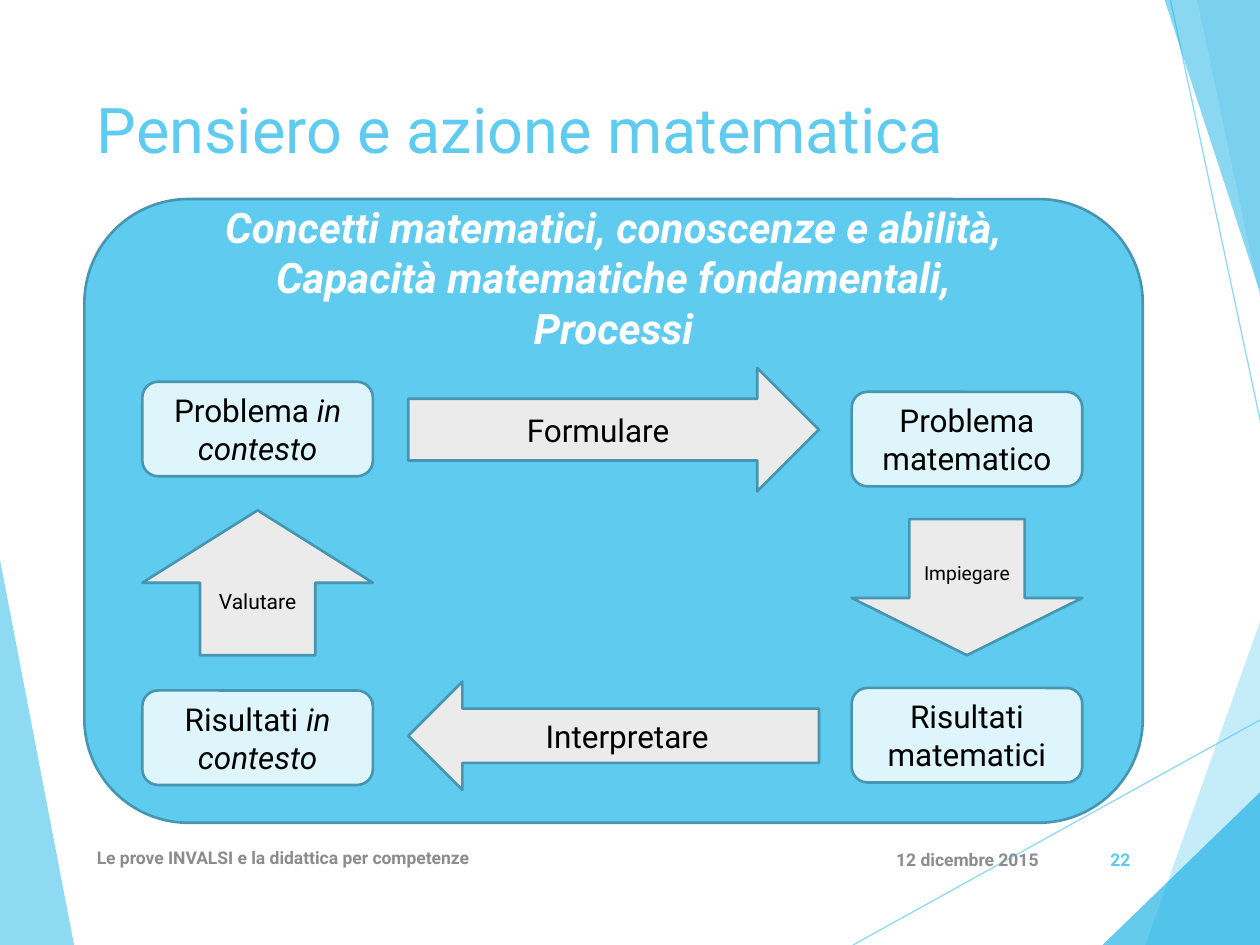
from pptx import Presentation
from pptx.util import Inches, Pt
from pptx.dml.color import RGBColor
from pptx.enum.shapes import MSO_CONNECTOR as Link, MSO_SHAPE as Kind
from pptx.enum.text import MSO_ANCHOR as Anchor, PP_ALIGN as Align
from pptx.oxml.ns import qn
from lxml.etree import SubElement

SKY = RGBColor(0x5F, 0xCB, 0xEF)
BLUE = RGBColor(0x17, 0xB0, 0xE4)
EDGE = RGBColor(0x46, 0x96, 0xB1)
PALE = RGBColor(0xDF, 0xF5, 0xFC)
MIST = RGBColor(0xEB, 0xEB, 0xEB)
GRAY = RGBColor(0x8C, 0x8C, 0x8C)
WHITE = RGBColor(0xFF, 0xFF, 0xFF)
BLACK = RGBColor(0, 0, 0)

deck = Presentation()
deck.slide_width, deck.slide_height = Inches(10), Inches(7.5)
slide = deck.slides.add_slide(deck.slide_layouts[6])
shapes = slide.shapes
unit = deck.slide_width / 100


def grid(*cells):
    return [round(cell * unit) for cell in cells]


def write(shape, lines, size, color, align, anchor=Anchor.MIDDLE, bold=False):
    frame = shape.text_frame
    frame.word_wrap = True
    frame.vertical_anchor = anchor
    frame.text = lines
    for para in frame.paragraphs:
        para.alignment = align
        for run in para.runs:
            run.font.name = "Roboto"
            run.font.size = Pt(size)
            run.font.bold = bold
            run.font.color.rgb = color


wedges = [
    (SKY, 70, [(-0.1, 43.9), (5.9, 75.1), (-0.1, 75)]),
    (SKY, 36, [(117.5, 0), (90.9, 75), (120.8, 75.1), (120.7, 0.1)]),
    (SKY, 20, [(95, -0.1), (110.8, 75), (120.7, 75), (120.7, -0.1)]),
    (BLUE, 66, [(87.5, 75), (120.6, 42.9), (120.7, 75)]),
    (BLUE, 50, [(92.4, -0.1), (116.9, 75), (120.7, 74.9), (120.7, -0.1)]),
]
rays = [(67.7, 75, 120.7, 45.7), (92.9, 0, 108.9, 75)]

for num, (color, alpha, points) in enumerate(wedges):
    if num == 1:
        for ray in rays:
            line = shapes.add_connector(Link.STRAIGHT, *grid(*ray))
            line.line.color.rgb = SKY
            line.line.width = Pt(0.75)
            tint = line.line.fill._xPr.find(".//" + qn("a:srgbClr"))
            SubElement(tint, qn("a:alpha"), val="70000")
            SubElement(line._element.spPr, qn("a:effectLst"))
    points = [grid(*point) for point in points]
    form = shapes.build_freeform(*points[0])
    form.add_line_segments(points[1:])
    wedge = form.convert_to_shape()
    wedge.shadow.inherit = False
    wedge.line.fill.background()
    wedge.fill.solid()
    wedge.fill.fore_color.rgb = color
    tint = wedge._element.spPr.find(".//" + qn("a:srgbClr"))
    SubElement(tint, qn("a:alpha"), val=str(alpha * 1000))

labels = [
    ("Pensiero e azione matematica", (6.7, 6.7, 84, 14.4), 36, SKY, Align.LEFT, Anchor.TOP, False),
    ("12 dicembre 2015", (69.1, 66.2, 14.3, 4), 10, GRAY, Align.RIGHT, Anchor.MIDDLE, True),
    ("Le prove INVALSI e la didattica per competenze", (6.7, 66.1, 61, 4), 10, GRAY,
     Align.LEFT, Anchor.MIDDLE, True),
    ("22", (85.1, 66.2, 5.6, 4), 10, SKY, Align.RIGHT, Anchor.MIDDLE, True),
]
for text, cells, *style in labels:
    write(shapes.add_textbox(*grid(*cells)), text, *style)

left, right, mid = 11.3, 67.6, 32.4
wide, high, span = 18.3, 7.5, 32.6
theme = "Concetti matematici, conoscenze e abilità,\nCapacità matematiche fondamentali,\nProcessi"
parts = [
    (Kind.ROUNDED_RECTANGLE, (6.7, 15.8, 84, 49.5), SKY, theme, 24),
    (Kind.ROUNDED_RECTANGLE, (left, 30.3, wide, high), PALE, "Problema in contesto", 18),
    (Kind.ROUNDED_RECTANGLE, (right, 31.1, wide, high), PALE, "Problema matematico", 18),
    (Kind.ROUNDED_RECTANGLE, (left, 54.8, wide, high), PALE, "Risultati in contesto", 18),
    (Kind.ROUNDED_RECTANGLE, (right, 54.6, wide, high), PALE, "Risultati matematici", 18),
    (Kind.RIGHT_ARROW, (mid, 29.2, span, 9.8), MIST, "Formulare", 18),
    (Kind.DOWN_ARROW, (right, 41.2, wide, 10.8), MIST, "Impiegare", 11),
    (Kind.LEFT_ARROW, (mid, 54.1, span, 8.6), MIST, "Interpretare", 18),
    (Kind.UP_ARROW, (left, 40.5, wide, 11.5), MIST, "Valutare", 12),
]
for kind, cells, color, text, size in parts:
    part = shapes.add_shape(kind, *grid(*cells))
    part.shadow.inherit = False
    part.fill.solid()
    part.fill.fore_color.rgb = color
    part.line.color.rgb = EDGE
    part.line.width = Pt(1.5)
    main = text == theme
    write(part, text, size, WHITE if main else BLACK, Align.CENTER, bold=main)
    if main:
        part.text_frame.margin_bottom = grid(37.6)[0]
        for para in part.text_frame.paragraphs:
            para.runs[0].font.italic = True
    if kind == Kind.DOWN_ARROW:
        part.adjustments[1] = 0.42
    if text.endswith("in contesto"):
        para = part.text_frame.paragraphs[0]
        first = para.runs[0]
        first.text = text.removesuffix("in contesto")
        tail = para.add_run()
        tail.text = "in contesto"
        tail.font.name = "Roboto"
        tail.font.size = Pt(size)
        tail.font.italic = True
        tail.font.color.rgb = BLACK

deck.save("out.pptx")
